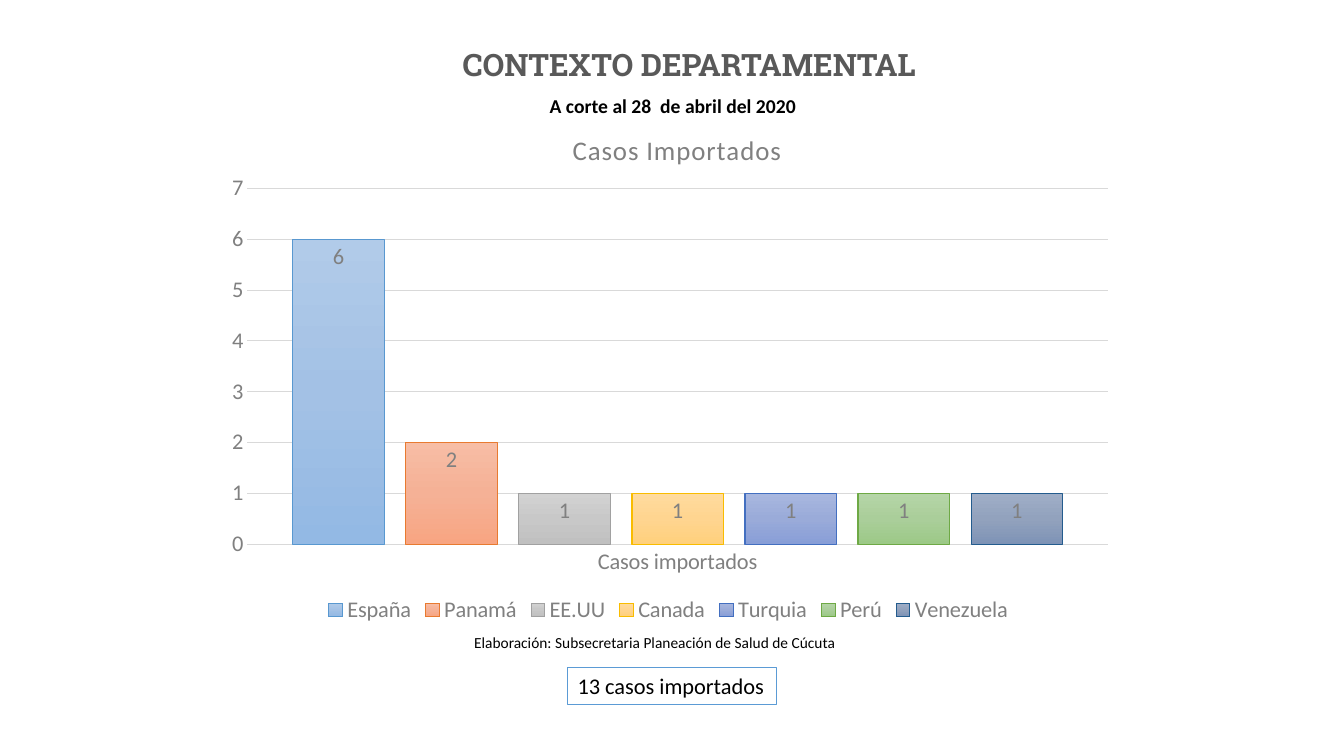
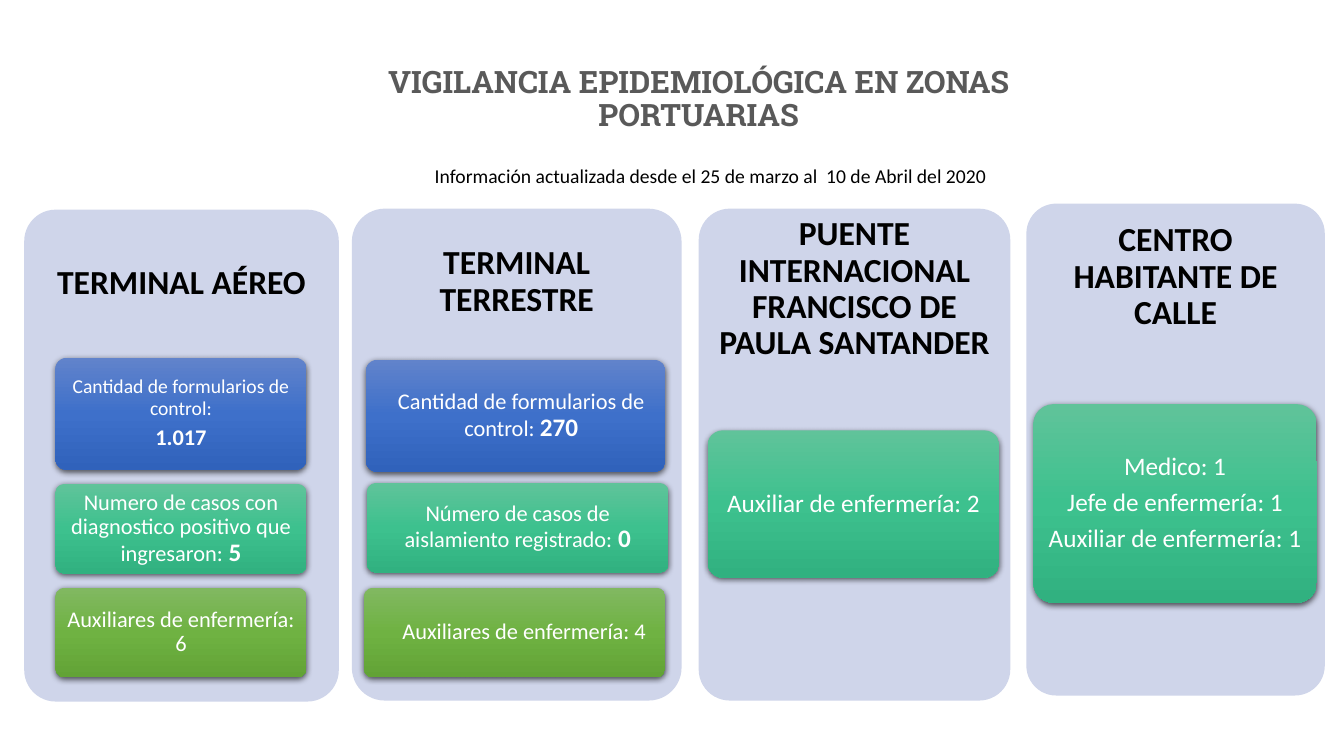
from copy import deepcopy
from dataclasses import dataclass
from typing import Any

from lxml import etree
from pptx import Presentation
from pptx import util as u
from pptx.chart.data import CategoryChartData
from pptx.dml.color import RGBColor
from pptx.enum import chart as charts
from pptx.enum import shapes, text
from pptx.oxml import parse_xml
from pptx.oxml.ns import nsdecls, qn

EMU_PER_PX = 9144
BODY_FONT = "Calibri"
TITLE_FONT = "Roboto Slab"
BLACK = "000000"
WHITE = "FFFFFF"
GRAY = "808080"
GRID = "D9D9D9"
TITLE_COLOR = "595959"
PANEL = "CFD5EA"
BLUE = ("6183CB", "3E70CA", "3062BB")
TEAL = ("60C39A", "3DC18E", "31B180")
GREEN = ("81B861", "6FB242", "62A336")
PANEL_HEIGHT = 488
HEADING_HEIGHT = 146
FIT = text.MSO_AUTO_SIZE.SHAPE_TO_FIT_TEXT
MIDDLE = text.MSO_ANCHOR.MIDDLE
CENTER = text.PP_ALIGN.CENTER


@dataclass(frozen=True)
class Frame:
    left: int
    top: int
    width: int
    height: int

    def emu(self) -> list[u.Emu]:
        return [px(side) for side in (self.left, self.top, self.width, self.height)]


@dataclass(frozen=True)
class Span:
    words: str
    size: float
    bold: bool = False
    color: str = BLACK
    font: str = BODY_FONT


@dataclass(frozen=True)
class Card:
    frame: Frame
    gradient: tuple[str, str, str]
    paras: tuple[tuple[Span, ...], ...]
    shift: int = 0


@dataclass(frozen=True)
class Panel:
    left: int
    top: int
    width: int
    heading: str
    inset: int
    cards: tuple[Card, ...]
    heading_drop: int = 0


@dataclass(frozen=True)
class Country:
    name: str
    cases: int
    gradient: tuple[str, str, str]
    line: str


def light(words: str, size: int, bold: bool = False) -> Span:
    return Span(words, size, bold, WHITE)


COUNTRIES = (
    Country("España", 6, ("B1CBE9", "A3C1E5", "93B9E4"), "5998D0"),
    Country("Panamá", 2, ("F7BDA5", "F5B196", "F8A582"), "E87A30"),
    Country("EE.UU", 1, ("D2D2D2", "C8C8C8", "C0C0C0"), "A1A1A1"),
    Country("Canada", 1, ("FFDB9E", "FFD590", "FFD07C"), "F9BC00"),
    Country("Turquia", 1, ("A8B7DF", "9AABD9", "889ED7"), "436FC0"),
    Country("Perú", 1, ("B5D5A7", "AACE9A", "9CC987"), "6EA945"),
    Country("Venezuela", 1, ("9FAEC7", "92A2BD", "7E93B6"), "245C8E"),
)

PANELS = (
    Panel(24, 208, 312, "TERMINAL AÉREO", 10, (
        Card(Frame(55, 355, 249, 111), BLUE, (
            (light("Cantidad de formularios de control:", 14),),
            (light("1.017", 16, True),),
        )),
        Card(Frame(55, 480, 249, 89), TEAL, (
            (light("Numero de casos con diagnostico positivo que ingresaron:", 16),
             light(" 5", 18, True)),
        )),
        Card(Frame(55, 583, 249, 89), GREEN, ((light("Auxiliares de enfermería: 6", 16),),)),
    )),
    Panel(349, 207, 327, "TERMINAL TERRESTRE", 12, (
        Card(Frame(363, 357, 297, 111), BLUE, (
            (light("Cantidad de formularios de control: ", 16), light("270", 18, True)),
        ), 11),
        Card(Frame(364, 479, 299, 89), TEAL, (
            (light("Número de casos de aislamiento registrado:", 16), light(" 0", 18, True)),
        )),
        Card(Frame(361, 583, 299, 89), GREEN,
             ((light("Auxiliares de enfermería: 4", 16),),), 19),
    )),
    Panel(693, 207, 309, "PUENTE INTERNACIONAL FRANCISCO DE PAULA SANTANDER", 12, (
        Card(Frame(702, 427, 289, 146), TEAL, ((light("Auxiliar de enfermería: 2", 18),),)),
    ), 7),
    Panel(1018, 202, 296, "CENTRO HABITANTE DE CALLE", 12, (
        Card(Frame(1025, 401, 281, 197), TEAL, tuple(
            (light(words, 18),)
            for words in ("Medico: 1", "Jefe de enfermería: 1", "Auxiliar de enfermería: 1")
        )),
    )),
)


def px(length: int) -> u.Emu:
    return u.Emu(length * EMU_PER_PX)


def rgb(color: str) -> RGBColor:
    return RGBColor.from_string(color)


def apply(target: Any, values: dict[str, Any]) -> None:
    for name, value in values.items():
        setattr(target, name, value)


def style_font(font: Any, size: float, color: str, name: str = BODY_FONT, bold: bool = False) -> None:
    apply(font, {"size": u.Pt(size), "name": name, "bold": bold})
    font.color.rgb = rgb(color)


def margins(left: int, top: int, right: int, bottom: int) -> dict[str, u.Emu]:
    return {"margin_left": px(left), "margin_top": px(top),
            "margin_right": px(right), "margin_bottom": px(bottom)}


def write_text(box: Any, paras: tuple[tuple[Span, ...], ...], frame_format: dict[str, Any],
               para_format: dict[str, Any], after: float = 0) -> None:
    frame = box.text_frame
    apply(frame, {"word_wrap": True, **frame_format})
    for index, spans in enumerate(paras):
        para = frame.paragraphs[0] if index == 0 else frame.add_paragraph()
        apply(para, para_format)
        if after:
            para.space_after = u.Pt(round(after * spans[0].size, 1))
        for span in spans:
            run = para.add_run()
            run.text = span.words
            style_font(run.font, span.size, span.color, span.font, span.bold)


def add_text(page: Any, frame: Frame, span: Span, frame_format: dict[str, Any],
             line_spacing: float = 1.0, after: float = 0) -> None:
    box = page.shapes.add_textbox(*frame.emu())
    write_text(box, ((span,),), frame_format,
               {"alignment": CENTER, "line_spacing": line_spacing}, after)


def add_title(page: Any, frame: Frame, words: str) -> None:
    add_text(page, frame, Span(words, 22, True, TITLE_COLOR, TITLE_FONT),
             {"vertical_anchor": MIDDLE}, 0.9)


def add_shape(page: Any, kind: Any, frame: Frame) -> Any:
    shape = page.shapes.add_shape(kind, *frame.emu())
    shape.shadow.inherit = False
    shape.line.fill.background()
    return shape


def add_rounded(page: Any, frame: Frame) -> Any:
    shape = add_shape(page, shapes.MSO_SHAPE.ROUNDED_RECTANGLE, frame)
    shape.adjustments[0] = 0.1
    return shape


def fill_gradient(fill: Any, element: Any, colors: tuple[str, str, str]) -> None:
    fill.gradient()
    fill.gradient_angle = 270
    stops = element.find(".//" + qn("a:gsLst"))
    stops.insert(1, deepcopy(stops[0]))
    for index, (stop, color) in enumerate(zip(fill.gradient_stops, colors)):
        stop.color.rgb = rgb(color)
        stop.position = index / 2


def add_shadow(shape: Any) -> None:
    effects = shape.element.find(".//" + qn("a:effectLst"))
    effects.append(parse_xml(
        f'<a:outerShdw {nsdecls("a")} blurRad="57150" dist="19050" dir="5400000" '
        'algn="ctr" rotWithShape="0"><a:srgbClr val="000000"><a:alpha val="63000"/>'
        '</a:srgbClr></a:outerShdw>'))


def add_card(page: Any, card: Card) -> None:
    shape = add_rounded(page, card.frame)
    fill_gradient(shape.fill, shape.element, card.gradient)
    add_shadow(shape)
    write_text(shape, card.paras,
               {"vertical_anchor": MIDDLE, **margins(4 + card.shift, 3, 4, 3)},
               {"alignment": CENTER, "line_spacing": 0.9}, 0.35)


def add_panel(page: Any, panel: Panel) -> None:
    back = add_rounded(page, Frame(panel.left, panel.top, panel.width, PANEL_HEIGHT))
    back.fill.solid()
    back.fill.fore_color.rgb = rgb(PANEL)
    add_text(page, Frame(panel.left, panel.top + panel.heading_drop, panel.width, HEADING_HEIGHT),
             Span(panel.heading, 24, True),
             {"vertical_anchor": MIDDLE, **margins(*[panel.inset] * 4)}, 0.9, 0.35)
    for card in panel.cards:
        add_card(page, card)


def place(parent: Any, index: int, values: dict[str, Any]) -> None:
    old = parent.find(qn("c:layout"))
    if old is not None:
        parent.remove(old)
    layout = parse_xml(f'<c:layout {nsdecls("c")}><c:manualLayout/></c:layout>')
    for name, value in values.items():
        etree.SubElement(layout[0], qn("c:" + name)).set("val", str(value))
    parent.insert(index, layout)


def add_cases_chart(page: Any) -> None:
    data = CategoryChartData()
    data.categories = ["Casos importados"]
    for country in COUNTRIES:
        data.add_series(country.name, [country.cases])
    chart = page.shapes.add_chart(charts.XL_CHART_TYPE.COLUMN_CLUSTERED,
                                  *Frame(209, 104, 908, 519).emu(), data).chart
    style_font(chart.font, 16, GRAY)
    apply(chart, {"has_title": True, "has_legend": True})
    title = chart.chart_title
    run = title.text_frame.paragraphs[0].add_run()
    run.text = "Casos Importados"
    style_font(run.font, 19.2, GRAY)
    run.font._element.set("spc", "50")
    edges = {"xMode": "edge", "yMode": "edge"}
    place(title._element, 1, {**edges, "x": 0.39, "y": 0.04})
    place(chart.plots[0]._element.getparent(), 0,
          {"layoutTarget": "inner", **edges, "x": 0.04, "y": 0.16, "w": 0.94, "h": 0.68})
    apply(chart.legend, {"position": charts.XL_LEGEND_POSITION.BOTTOM, "include_in_layout": False})
    style_font(chart.legend.font, 16, GRAY)
    for axis in (chart.category_axis, chart.value_axis):
        apply(axis, {"major_tick_mark": charts.XL_TICK_MARK.NONE,
                     "minor_tick_mark": charts.XL_TICK_MARK.NONE})
        style_font(axis.tick_labels.font, 16, GRAY)
    apply(chart.value_axis, {"minimum_scale": 0, "maximum_scale": 7, "major_unit": 1,
                             "has_major_gridlines": True})
    chart.value_axis.format.line.fill.background()
    for line in (chart.category_axis.format.line, chart.value_axis.major_gridlines.format.line):
        line.color.rgb = rgb(GRID)
        line.width = u.Pt(0.75)
    plot = chart.plots[0]
    apply(plot, {"gap_width": 100, "overlap": -24, "vary_by_categories": False})
    for series, country in zip(plot.series, COUNTRIES):
        fill_gradient(series.format.fill, series._element, country.gradient)
        series.format.line.color.rgb = rgb(country.line)
        series.format.line.width = u.Pt(0.75)
        apply(series.data_labels, {"show_value": True,
                                   "position": charts.XL_LABEL_POSITION.INSIDE_END})
        style_font(series.data_labels.font, 16, GRAY)


def build_cases(page: Any) -> None:
    add_cases_chart(page)
    add_title(page, Frame(382, 14, 603, 104), "CONTEXTO DEPARTAMENTAL")
    total = add_shape(page, shapes.MSO_SHAPE.RECTANGLE, Frame(563, 662, 207, 37))
    total.fill.solid()
    total.fill.fore_color.rgb = rgb(WHITE)
    total.line.color.rgb = rgb("5B9BD5")
    total.line.width = u.Pt(1)
    write_text(total, ((Span("13 casos importados", 16),),),
               {"word_wrap": False, "auto_size": FIT, "vertical_anchor": text.MSO_ANCHOR.TOP},
               {"alignment": text.PP_ALIGN.LEFT})
    add_text(page, Frame(382, 623, 535, 29),
             Span("Elaboración: Subsecretaria Planeación de Salud de Cúcuta", 11), {"auto_size": FIT})
    add_text(page, Frame(341, 88, 653, 34),
             Span("A corte al 28  de abril del 2020", 14, True), {"auto_size": FIT})


def build_ports(page: Any) -> None:
    for panel in PANELS:
        add_panel(page, panel)
    add_title(page, Frame(353, 37, 680, 124), "VIGILANCIA EPIDEMIOLÓGICA EN ZONAS PORTUARIAS")
    add_text(page, Frame(400, 158, 610, 34),
             Span("Información actualizada desde el 25 de marzo al  10 de Abril del 2020", 14),
             {"auto_size": FIT})


def main() -> None:
    deck = Presentation()
    apply(deck, {"slide_width": px(1333), "slide_height": px(750)})
    for build in (build_cases, build_ports):
        build(deck.slides.add_slide(deck.slide_layouts[6]))
    deck.save("out.pptx")


if __name__ == "__main__":
    main()
